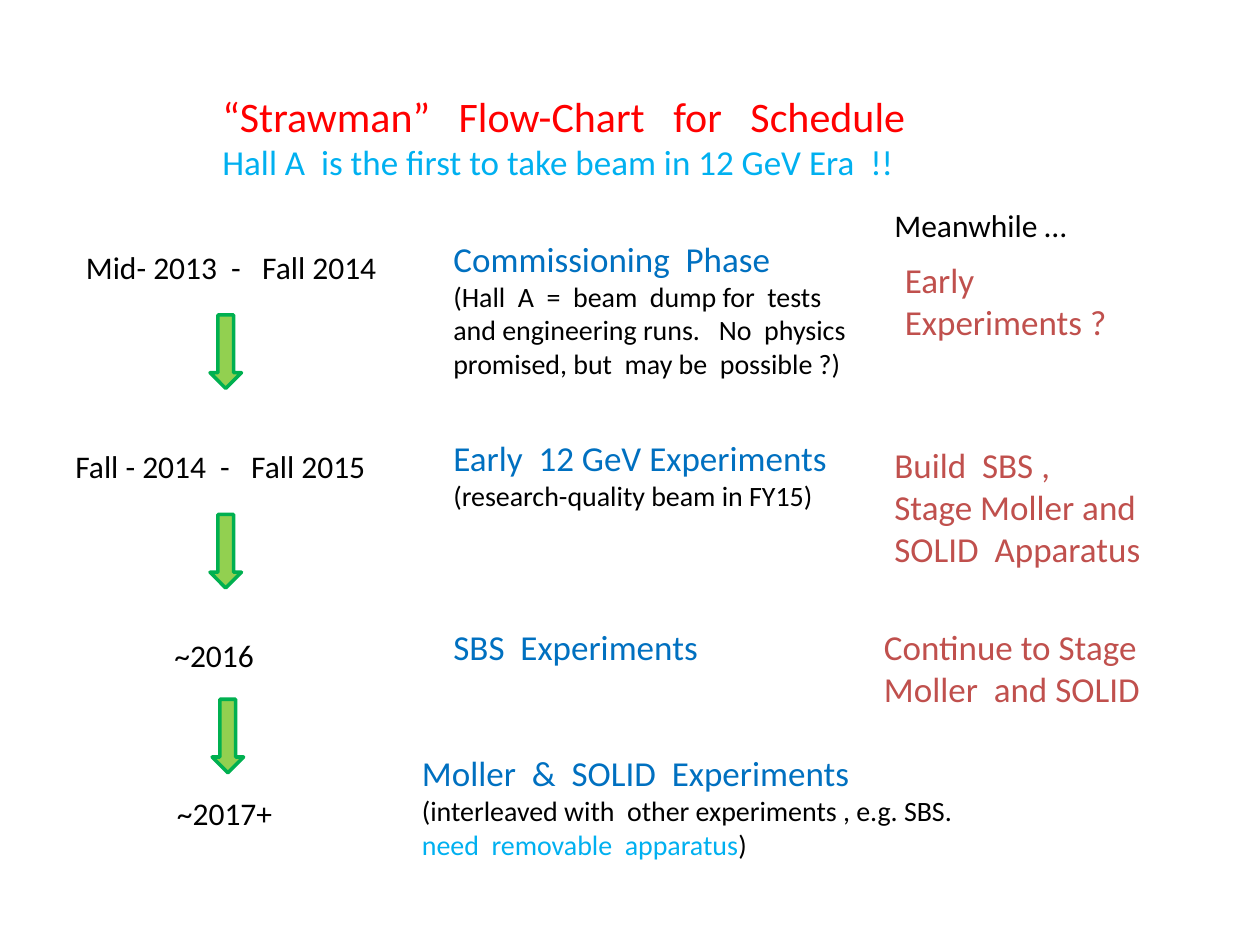
from pptx import Presentation
from pptx.dml.color import RGBColor
from pptx.enum.shapes import MSO_SHAPE
from pptx.enum.text import MSO_AUTO_SIZE
from pptx.util import Inches, Pt

DOWN = MSO_SHAPE.DOWN_ARROW
GROW = MSO_AUTO_SIZE.SHAPE_TO_FIT_TEXT
RED = RGBColor(0xFF, 0x00, 0x00)
SKY = RGBColor(0x00, 0xB0, 0xF0)
BLUE = RGBColor(0x00, 0x70, 0xC0)
BRICK = RGBColor(0xC0, 0x50, 0x4D)
BLACK = RGBColor(0x00, 0x00, 0x00)
LIME = RGBColor(0x92, 0xD0, 0x50)
GREEN = RGBColor(0x00, 0xB0, 0x50)
FONT = "Calibri"
WIDE, HIGH = Inches(10), Inches(7.5)
COLS, ROWS = 120, 90


def place(box):
    """Turn a box in columns and rows into slide lengths."""
    left, top, width, height = box
    return (round(left * WIDE / COLS), round(top * HIGH / ROWS),
            round(width * WIDE / COLS), round(height * HIGH / ROWS))


def write(slide, box, *paras, size=20, color=BLACK, inset=1.2):
    """Write paragraphs, each a list of (text, format) runs or a plain string."""
    frame = slide.shapes.add_textbox(*place(box)).text_frame
    frame.word_wrap = True
    frame.auto_size = GROW
    frame.margin_left = round(inset * WIDE / COLS)
    for i, runs in enumerate(paras):
        para = frame.add_paragraph() if i else frame.paragraphs[0]
        for text, form in [(runs, {})] if isinstance(runs, str) else runs:
            run = para.add_run()
            run.text = text
            run.font.name = FONT
            run.font.size = Pt(form.get("size", size))
            run.font.color.rgb = form.get("color", color)


def head(slide, box):
    """Write the title and its subtitle."""
    write(slide, box,
          [("“Strawman”   Flow-Chart   for   Schedule", {"size": 24})],
          [("Hall A  is the first to take beam in 12 GeV Era  !!", {"color": SKY})],
          color=RED)


def date(slide, box, text, inset=1.2):
    """Write a period of the schedule."""
    write(slide, box, text, size=18, inset=inset)


def phase(slide, box, name, *note):
    """Write a phase name with an optional note of (text, colour) parts."""
    runs = [(text, {"size": 16, "color": color}) for text, color in note]
    write(slide, box, name, *([runs] if runs else []), color=BLUE)


def task(slide, box, *lines):
    """Write the work done alongside a phase."""
    write(slide, box, *lines, color=BRICK)


def arrow(slide, box):
    """Draw a block arrow to the next period."""
    shape = slide.shapes.add_shape(DOWN, *place(box))
    shape.shadow.inherit = False
    shape.fill.solid()
    shape.fill.fore_color.rgb = LIME
    shape.line.color.rgb = GREEN
    shape.line.width = Pt(2)


def main():
    """Build the schedule slide."""
    deck = Presentation()
    deck.slide_width, deck.slide_height = WIDE, HIGH
    slide = deck.slides.add_slide(deck.slide_layouts[6])

    head(slide, (20, 8, 82, 10))

    date(slide, (7, 23, 33.4, 4.8), "Mid- 2013  -   Fall 2014")
    date(slide, (6, 42, 33.4, 4.8), "Fall - 2014  -   Fall 2015")
    date(slide, (12, 60, 27, 4.8), "~2016", inset=4.6)
    date(slide, (12.25, 75, 27, 4.8), "~2017+", inset=4.6)
    for left, top in ((20, 30), (20, 49), (20.2, 66.6)):
        arrow(slide, (left, top, 3, 7))

    phase(slide, (42, 22, 41, 15), "Commissioning  Phase",
          ("(Hall  A  =  beam  dump for  tests and engineering runs.   "
           "No  physics promised, but  may be  possible ?)", BLACK))
    phase(slide, (42, 41, 41, 8.5), "Early  12 GeV Experiments",
          ("(research-quality beam in FY15)", BLACK))
    phase(slide, (42, 59, 41, 5.3), "SBS  Experiments")
    phase(slide, (39, 71, 57, 11.8), "Moller  &  SOLID  Experiments",
          ("(interleaved with  other experiments , e.g. SBS.  ", BLACK),
          ("need  removable  apparatus", SKY), (")", BLACK))

    date(slide, (84, 19, 26, 4.8), "Meanwhile …")
    task(slide, (85, 24, 24, 9.2), "Early  Experiments ?")
    task(slide, (84, 41.6, 33, 13.3), "Build  SBS ,",
         "Stage Moller and SOLID  Apparatus")
    task(slide, (83, 59, 33, 9.2), "Continue to Stage  Moller  and SOLID")

    deck.save("out.pptx")


if __name__ == "__main__":
    main()
